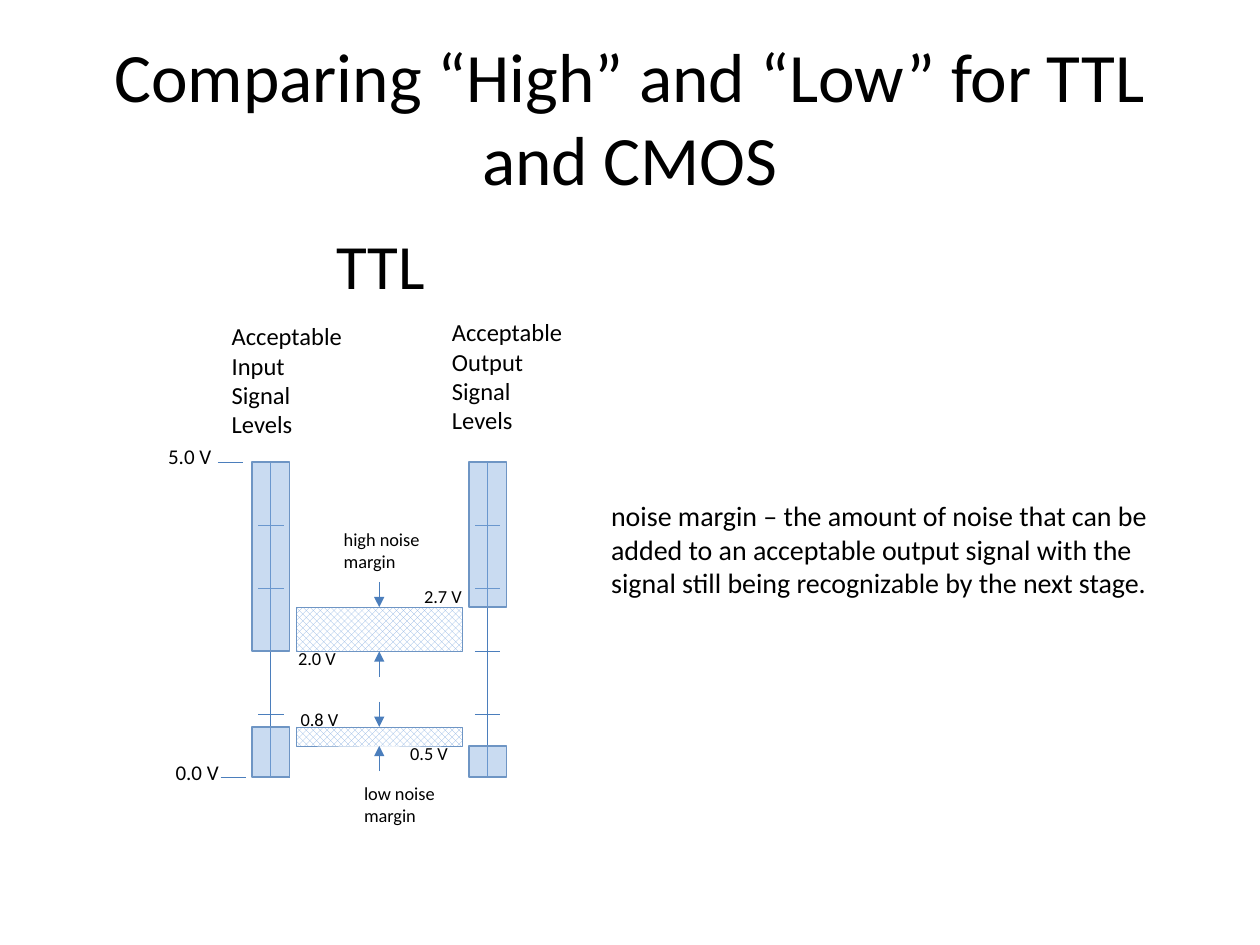
"""Build a slide comparing TTL input and output signal levels."""
from lxml import etree
from pptx import Presentation
from pptx.dml.color import RGBColor
from pptx.enum.dml import MSO_PATTERN_TYPE
from pptx.enum.shapes import MSO_CONNECTOR, MSO_SHAPE
from pptx.enum.text import MSO_ANCHOR, PP_ALIGN
from pptx.oxml.ns import qn
from pptx.util import Cm, Pt

RECT = MSO_SHAPE.RECTANGLE
STRAIGHT = MSO_CONNECTOR.STRAIGHT
DIAMONDS = MSO_PATTERN_TYPE.OUTLINED_DIAMOND
CENTER, MIDDLE = PP_ALIGN.CENTER, MSO_ANCHOR.MIDDLE
TOP, BOTTOM = 0, 2

BLACK = RGBColor(0, 0, 0)
WHITE = RGBColor(0xFF, 0xFF, 0xFF)
LIGHT = RGBColor(0x8E, 0xB4, 0xE3)
BORDER = RGBColor(0x6E, 0x95, 0xC4)
LINE = RGBColor(0x4B, 0x7E, 0xBC)
FONT = "Calibri"

TITLE = ("Comparing “High” and “Low” for TTL and CMOS", 1.27, 0.76, 22.86, 3.18, 39.6)
TEXTS = [
    ("TTL", 6.53, 4.45, 3.35, 1.8, 36),
    ("Acceptable Input Signal Levels", 4.42, 6.35, 2.74, 2.64, 14),
    ("Acceptable Output Signal Levels", 8.86, 6.27, 2.74, 2.64, 14),
    ("noise margin – the amount of noise that can be added to an acceptable "
     "output signal with the signal still being recognizable by the next stage.",
     12.07, 9.93, 11.89, 2.31, 16),
    ("high noise margin", 6.68, 10.52, 2.11, 1.14, 10.5),
    ("low noise margin", 7.09, 15.65, 2.11, 1.14, 10.5),
    ("0.8 V", 5.81, 14.15, 1.57, 0.74, 10.5),
    ("0.5 V", 8.02, 14.83, 1.57, 0.74, 10.5),
    ("2.0 V", 5.76, 12.93, 1.57, 0.74, 10.5),
    ("2.7 V", 8.3, 11.68, 1.57, 0.74, 10.5),
    ("0.0 V", 3.29, 15.19, 1.57, 0.76, 12),
    ("5.0 V", 3.14, 8.81, 1.57, 0.76, 12),
]
COLUMNS = [(5.46, (0, 0.8), (2, 5)), (9.83, (0, 0.5), (2.7, 5))]
MARGINS = [(0.5, 0.8), (2, 2.7)]
SCALE_MARKS = [(0, 4.45), (5, 4.39)]

MAX_VOLTS, ZERO_Y, CM_PER_VOLT = 5, 15.67, 1.27
BAR_W, TICK_W, ARROW_LEN = 0.76, 0.51, 0.51
BAND_X, BAND_W = 5.97, 3.35


def level_y(volts):
    return ZERO_Y - volts * CM_PER_VOLT


def add_text(slide, text, x, y, w, h, size):
    tb = slide.shapes.add_textbox(Cm(x), Cm(y), Cm(w), Cm(h))
    tf = tb.text_frame
    tf.word_wrap = True
    tf.text = text
    font = tf.paragraphs[0].runs[0].font
    font.name, font.size, font.color.rgb = FONT, Pt(size), BLACK
    return tf


def add_line(slide, x1, y1, x2, y2):
    cn = slide.shapes.add_connector(STRAIGHT, Cm(x1), Cm(y1), Cm(x2), Cm(y2))
    cn.line.color.rgb = LINE
    cn.line.width = Pt(0.75)
    etree.SubElement(cn._element.spPr, qn("a:effectLst"))
    return cn


def add_range(slide, x, w, low, high, line_width):
    sp = slide.shapes.add_shape(RECT, Cm(x), Cm(level_y(high)), Cm(w),
                                Cm((high - low) * CM_PER_VOLT))
    sp.shadow.inherit = False
    sp.line.color.rgb = BORDER
    sp.line.width = Pt(line_width)
    return sp


def add_bar(slide, center, low, high):
    sp = add_range(slide, center - BAR_W / 2, BAR_W, low, high, 1)
    sp.fill.solid()
    sp.fill.fore_color.rgb = LIGHT
    color = sp._element.spPr.find(qn("a:solidFill"))[0]
    etree.SubElement(color, qn("a:alpha"), val="47000")
    return sp


def add_column(slide, center, low_range, high_range):
    axis = add_line(slide, center, level_y(MAX_VOLTS), center, ZERO_Y)
    for volts in range(MAX_VOLTS + 1):
        half = (BAR_W if volts in (0, MAX_VOLTS) else TICK_W) / 2
        y = level_y(volts)
        add_line(slide, center - half, y, center + half, y)
    axis.begin_connect(add_bar(slide, center, *high_range), TOP)
    axis.end_connect(add_bar(slide, center, *low_range), BOTTOM)


def add_margin(slide, low, high):
    band = add_range(slide, BAND_X, BAND_W, low, high, 0.25)
    band.fill.patterned()
    band.fill.pattern = DIAMONDS
    band.fill.fore_color.rgb = LIGHT
    band.fill.back_color.rgb = WHITE
    x = BAND_X + BAND_W / 2
    for volts, offset, side in ((high, -ARROW_LEN, TOP), (low, ARROW_LEN, BOTTOM)):
        y = level_y(volts)
        arrow = add_line(slide, x, y + offset, x, y)
        arrow.end_connect(band, side)
        etree.SubElement(arrow.line._get_or_add_ln(), qn("a:tailEnd"), type="triangle")


def main():
    prs = Presentation()
    prs.slide_width, prs.slide_height = Cm(25.4), Cm(19.05)
    slide = prs.slides.add_slide(prs.slide_layouts[6])

    tf = add_text(slide, *TITLE)
    tf.vertical_anchor = MIDDLE
    tf.paragraphs[0].alignment = CENTER

    for column in COLUMNS:
        add_column(slide, *column)
    for margin in MARGINS:
        add_margin(slide, *margin)
    for volts, x in SCALE_MARKS:
        add_line(slide, x, level_y(volts), x + TICK_W, level_y(volts))
    for text in TEXTS:
        add_text(slide, *text)

    prs.save("out.pptx")


if __name__ == "__main__":
    main()
